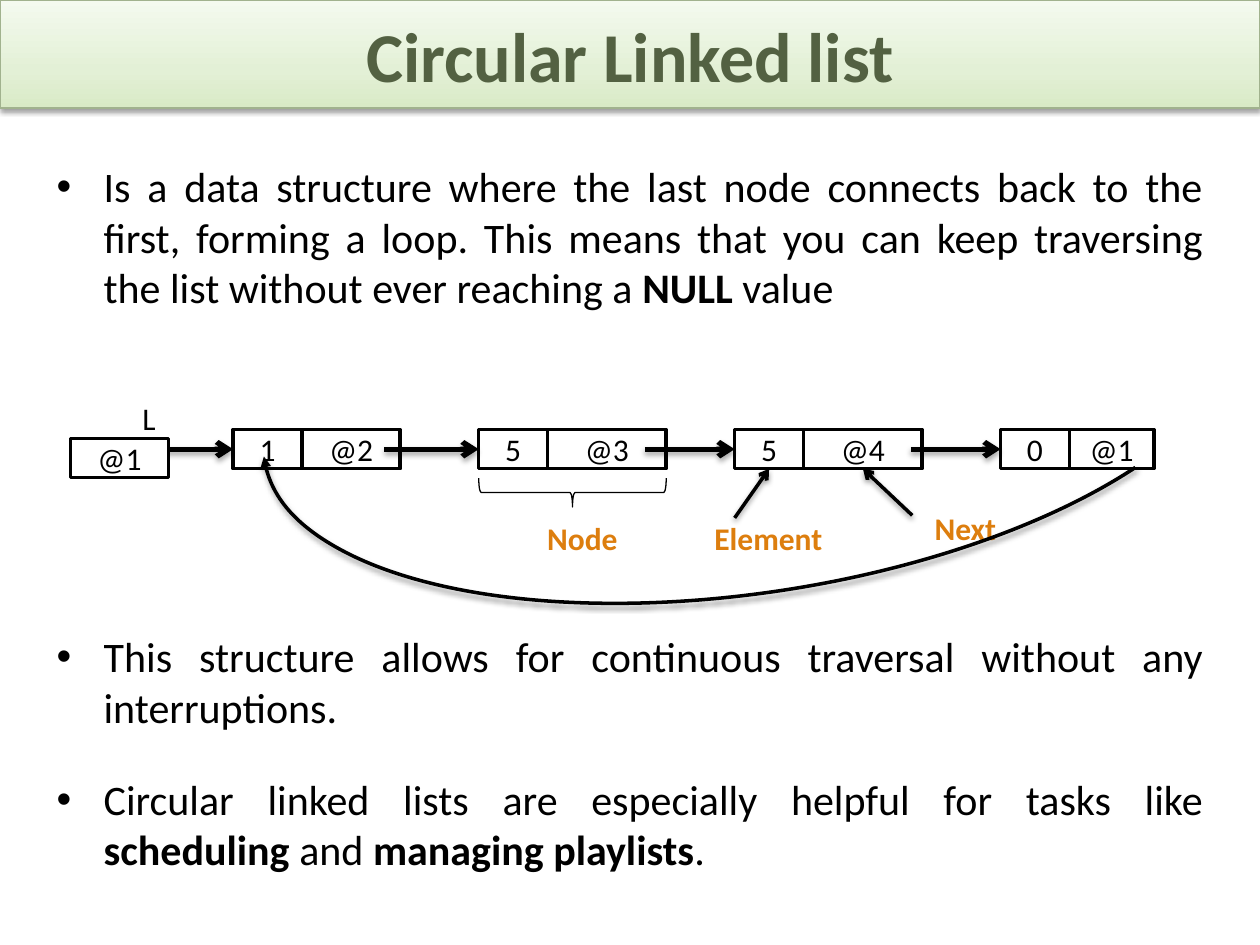
from copy import deepcopy

from lxml import etree
from pptx import Presentation
from pptx.dml.color import RGBColor
from pptx.enum.shapes import MSO_CONNECTOR, MSO_SHAPE
from pptx.enum.text import MSO_ANCHOR, PP_ALIGN
from pptx.oxml.ns import qn
from pptx.util import Cm, Pt

RECTANGLE, BRACE, ARC = MSO_SHAPE.RECTANGLE, MSO_SHAPE.RIGHT_BRACE, MSO_SHAPE.ARC
STRAIGHT = MSO_CONNECTOR.STRAIGHT
CENTER, JUSTIFY = PP_ALIGN.CENTER, PP_ALIGN.JUSTIFY
MIDDLE = MSO_ANCHOR.MIDDLE
LEFT_SIDE, BOTTOM_SIDE = 1, 2

FONT = "Calibri"
COLORS = {
    "ink": "000000", "paper": "FFFFFF", "label": "DD7E0E", "title": "536142",
    "banner_line": "A1B28E", "banner_low": "D9EAC6", "banner_mid": "E3F0D6",
    "banner_high": "F4FAEF",
}

# Each paragraph: space before in points, then (text, bold) runs
PARAGRAPHS = [
    (0, [("Is a data structure where the last node connects back to the first, "
          "forming a loop. This means that you can keep traversing the list "
          "without ever reaching a ", False), ("NULL ", True), ("value", False)]),
    (164, [("This structure allows for continuous traversal without any "
            "interruptions.", False)]),
    (6, [("Circular linked lists are especially helpful for tasks like ", False),
         ("scheduling", True), (" and ", False),
         ("managing playlists", True), (".", False)]),
]

# Element, next address, left, width of the next cell, start of incoming arrow
NODES = [
    ("1", "@2", 3.28, 1.98, 1.88),
    ("5", "@3", 8.23, 2.39, 6.33),
    ("5", "@4", 13.39, 2.39, 11.58),
    ("0", "@1", 18.75, 1.70, 16.94),
]
NODE_TOP, CELL_HEIGHT, ELEMENT_WIDTH = 0.63, 0.79, 1.39
LABELS = [("Node", 8.44, 2.41), ("Element", 12.19, 2.41), ("Next", 16.16, 2.21)]
LABEL_WIDTH = 3.76


def rgb(name):
    return RGBColor.from_string(COLORS[name])


def set_line(shape, color, width):
    shape.line.color.rgb = rgb(color)
    shape.line.width = Pt(width)


def set_font(paragraph, size, color="ink", bold=None):
    font = paragraph.font
    font.name, font.size, font.bold = FONT, Pt(size), bold
    font.color.rgb = rgb(color)


def add_shadow(shape, distance=20000, opacity=38000):
    properties = shape._element.spPr
    for effects in properties.findall(qn("a:effectLst")):
        properties.remove(effects)
    effects = etree.SubElement(properties, qn("a:effectLst"))
    shadow = etree.SubElement(effects, qn("a:outerShdw"), blurRad="40000",
                              dist=str(distance), dir="5400000", rotWithShape="0")
    color = etree.SubElement(shadow, qn("a:srgbClr"), val=COLORS["ink"])
    etree.SubElement(color, qn("a:alpha"), val=str(opacity))


def add_head(shape, kind):
    etree.SubElement(shape.line._get_or_add_ln(), qn("a:tailEnd"), type=kind)


def set_text(shape, text, size=18, color="ink", bold=None):
    frame = shape.text_frame
    frame.margin_left = frame.margin_right = 0
    frame.margin_top = frame.margin_bottom = 0
    frame.vertical_anchor = MIDDLE
    frame.word_wrap = True
    paragraph = frame.paragraphs[0]
    paragraph.text = text
    paragraph.alignment = CENTER
    set_font(paragraph, size, color, bold)


def add_cell(slide, text, left, top, width, outlined=True):
    cell = slide.shapes.add_shape(RECTANGLE, Cm(left), Cm(top), Cm(width),
                                  Cm(CELL_HEIGHT))
    cell.shadow.inherit = False
    cell.fill.solid()
    cell.fill.fore_color.rgb = rgb("paper")
    if outlined:
        set_line(cell, "ink", 2)
    else:
        cell.line.fill.background()
    set_text(cell, text)
    return cell


def add_arrow(slide, start, target, side, width, distance, opacity):
    x, y = Cm(start[0]), Cm(start[1])
    arrow = slide.shapes.add_connector(STRAIGHT, x, y, x, y)
    arrow.end_connect(target, side)
    set_line(arrow, "ink", width)
    add_head(arrow, "arrow")
    add_shadow(arrow, distance, opacity)


def add_banner(slide, left, top, width, height):
    banner = slide.shapes.add_shape(RECTANGLE, Cm(left), Cm(top), Cm(width), Cm(height))
    banner.fill.gradient()
    banner.fill.gradient_angle = 90
    first_stop = banner._element.spPr.find(".//" + qn("a:gs"))
    first_stop.addnext(deepcopy(first_stop))
    shades = [(0, "banner_low"), (0.35, "banner_mid"), (1, "banner_high")]
    for stop, (position, color) in zip(banner.fill.gradient_stops, shades):
        stop.position = position
        stop.color.rgb = rgb(color)
    set_line(banner, "banner_line", 0.75)
    add_shadow(banner)
    set_text(banner, "Circular Linked list", 40, "title", True)


def add_body(slide, left, top, width, height):
    frame = slide.shapes.add_textbox(Cm(left), Cm(top), Cm(width), Cm(height)).text_frame
    frame.word_wrap = True
    for index, (space_before, runs) in enumerate(PARAGRAPHS):
        paragraph = frame.add_paragraph() if index else frame.paragraphs[0]
        paragraph.alignment = JUSTIFY
        paragraph.space_before, paragraph.space_after = Pt(space_before), Pt(18)
        properties = paragraph._p.get_or_add_pPr()
        properties.set("marL", str(Cm(0.95)))
        properties.set("indent", str(-Cm(0.95)))
        etree.SubElement(properties, qn("a:buFont"), typeface="Arial")
        etree.SubElement(properties, qn("a:buChar"), char="•")
        set_font(paragraph, 24)
        for text, bold in runs:
            run = paragraph.add_run()
            run.text = text
            run.font.bold = bold


def add_list_diagram(slide, left, top):
    # Head of the list
    add_cell(slide, "L", left + 0.89, top, ELEMENT_WIDTH, outlined=False)

    # Nodes
    node_top = top + NODE_TOP
    elements, addresses = [], []
    for value, address, x, address_width, _ in NODES:
        elements.append(add_cell(slide, value, left + x, node_top, ELEMENT_WIDTH))
        addresses.append(add_cell(slide, address, left + x + ELEMENT_WIDTH, node_top,
                                  address_width))

    # Links between nodes
    for element, (*_, start) in zip(elements, NODES):
        add_arrow(slide, (left + start, node_top + CELL_HEIGHT / 2), element,
                  LEFT_SIDE, 3, 23000, 35000)
    add_cell(slide, "@1", left, top + 0.81, 1.98)

    # Brace under the second node
    _, _, node_x, address_width, _ = NODES[1]
    node_width = ELEMENT_WIDTH + address_width
    depth = 0.58
    brace = slide.shapes.add_shape(
        BRACE, Cm(left + node_x + (node_width - depth) / 2),
        Cm(top + 1.9 - node_width / 2), Cm(depth), Cm(node_width))
    brace.rotation = 90
    brace.shadow.inherit = False
    brace.fill.background()
    set_line(brace, "ink", 0.75)

    # Labels and their pointers
    for text, x, y in LABELS:
        label = slide.shapes.add_textbox(Cm(left + x), Cm(top + y), Cm(LABEL_WIDTH),
                                         Cm(CELL_HEIGHT))
        set_text(label, text, color="label", bold=True)
    for x, y, target in [(13.39, 2.41, elements[2]), (16.97, 2.36, addresses[2])]:
        add_arrow(slide, (left + x, top + y), target, BOTTOM_SIDE, 2, 20000, 38000)

    # Loop from the last node back to the first
    loop = slide.shapes.add_shape(ARC, Cm(left + 3.79), Cm(top - 4.5), Cm(19.96), Cm(8.41))
    loop.rotation = 171.2
    loop.adjustments[0] = 120.7
    loop.adjustments[1] = 0.21
    loop.fill.background()
    set_line(loop, "ink", 2)
    add_head(loop, "triangle")
    add_shadow(loop)


def main():
    presentation = Presentation()
    presentation.slide_width, presentation.slide_height = Cm(25.4), Cm(19.05)
    slide = presentation.slides.add_slide(presentation.slide_layouts[6])
    add_body(slide, 0.89, 3.12, 23.62, 15.67)
    add_banner(slide, 0, 0, 25.4, 2.18)
    add_list_diagram(slide, 1.42, 8.03)
    presentation.save("out.pptx")


if __name__ == "__main__":
    main()
